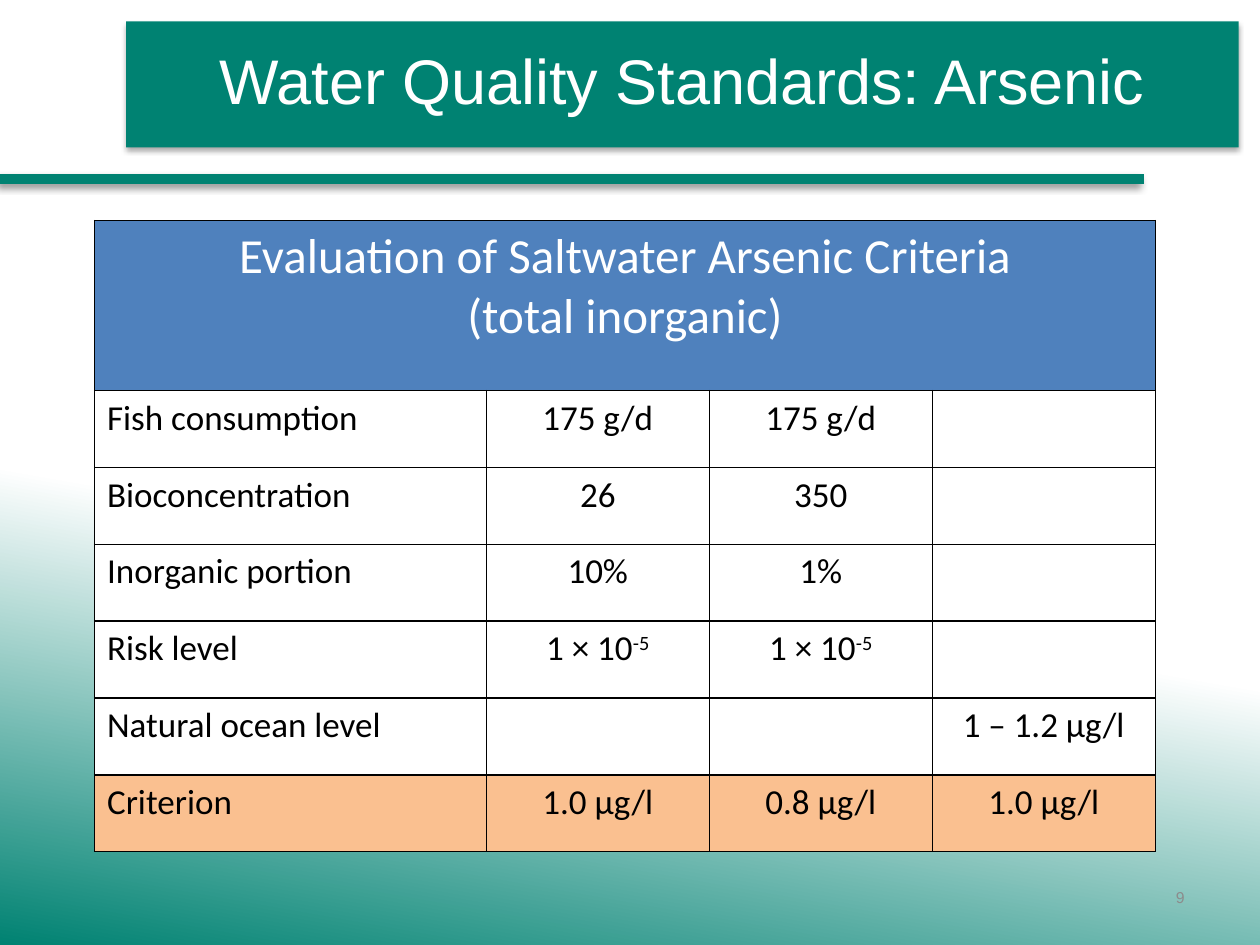
from lxml.etree import SubElement
from pptx import Presentation
from pptx.dml.color import RGBColor
from pptx.enum.shapes import MSO_CONNECTOR
from pptx.enum.text import MSO_ANCHOR, MSO_AUTO_SIZE, PP_ALIGN
from pptx.oxml.ns import qn
from pptx.util import Inches, Pt

COLORS = {
    "teal": "008272",
    "white": "FFFFFF",
    "black": "000000",
    "header": "4F81BD",
    "criterion": "FAC090",
    "page": "8C8C8C",
}
RGB = {name: RGBColor.from_string(value) for name, value in COLORS.items()}


def add_run(paragraph, text, font_name, size, color):
    run = paragraph.add_run()
    run.text = text
    run.font.name = font_name
    run.font.size = Pt(size)
    run.font.color.rgb = RGB[color]
    return run


def add_shadow(shape, opacity, blur, distance, angle):
    """Give the shape a black outer shadow; blur and distance are in points."""
    shape.shadow.inherit = False
    effects = shape._element.spPr.find(qn("a:effectLst"))
    outer = SubElement(effects, qn("a:outerShdw"), blurRad=str(Pt(blur)),
                       dist=str(Pt(distance)), dir=str(angle * 60000),
                       algn="ctr", rotWithShape="0")
    black = SubElement(outer, qn("a:srgbClr"), val=COLORS["black"])
    SubElement(black, qn("a:alpha"), val=str(opacity * 1000))


prs = Presentation()
prs.slide_width, prs.slide_height = Inches(10), Inches(7.5)
slide = prs.slides.add_slide(prs.slide_layouts[5])

# Background
backdrop = slide.background.fill
backdrop.gradient()
backdrop.gradient_angle = 260
for stop, position, color in zip(backdrop.gradient_stops, (0.59, 1), ("white", "teal")):
    stop.position = position
    stop.color.rgb = RGB[color]

# Title band and rule
title = slide.shapes.title
title.left, title.top = Inches(1), Inches(0.17)
title.width, title.height = Inches(8.83), Inches(1)
title.fill.solid()
title.fill.fore_color.rgb = RGB["teal"]
add_shadow(title, 35, 3.1, 1.8, 90)
heading = title.text_frame
heading.auto_size = MSO_AUTO_SIZE.NONE
heading.word_wrap = True
heading.vertical_anchor = MSO_ANCHOR.MIDDLE
heading.margin_left = heading.margin_right = Inches(0.21)
heading.margin_top = heading.margin_bottom = Inches(0.21)
heading.paragraphs[0].alignment = PP_ALIGN.CENTER
heading.paragraphs[0].line_spacing = 0.9
add_run(heading.paragraphs[0], "Water Quality Standards: Arsenic", "Arial", 36, "white")

rule = slide.shapes.add_connector(MSO_CONNECTOR.STRAIGHT, Inches(0), Inches(1.42),
                                  Inches(9.08), Inches(1.42))
rule.line.color.rgb = RGB["teal"]
rule.line.width = Pt(6)
SubElement(rule._element.spPr, qn("a:effectLst"))
rule_effects = rule._element.spPr.find(qn("a:effectLst"))
rule_shadow = SubElement(rule_effects, qn("a:outerShdw"), blurRad=str(Pt(4)),
                         dist=str(Pt(3)), dir=str(135 * 60000), rotWithShape="0")
SubElement(SubElement(rule_shadow, qn("a:srgbClr"), val=COLORS["black"]),
           qn("a:alpha"), val="40000")

# Criteria table: each cell is a list of paragraphs, "^" starts a superscript
rows = [
    ["Evaluation of Saltwater Arsenic Criteria\n(total inorganic)", "", "", ""],
    ["Fish consumption", "175 g/d", "175 g/d", ""],
    ["Bioconcentration", "26", "350", ""],
    ["Inorganic portion", "10%", "1%", ""],
    ["Risk level", "1 × 10^-5", "1 × 10^-5", ""],
    ["Natural ocean level", "", "", "1 – 1.2 µg/l"],
    ["Criterion", "1.0 µg/l", "0.8 µg/l", "1.0 µg/l"],
]
criteria = slide.shapes.add_table(len(rows), 4, Inches(0.75), Inches(1.75),
                                  Inches(8.42), Inches(5)).table
for c, column in enumerate(criteria.columns):
    column.width = Inches(1.77 if c else 3.11)
for r, row in enumerate(criteria.rows):
    row.height = Inches(0.61 if r else 1.35)
criteria.cell(0, 0).merge(criteria.cell(0, 3))

row_fills = ["header"] + ["white"] * 5 + ["criterion"]
for r, (values, row_fill) in enumerate(zip(rows, row_fills)):
    size, color = (20, "black") if r else (28, "white")
    for c, value in enumerate(values):
        cell = criteria.cell(r, c)
        cell_props = cell._tc.get_or_add_tcPr()
        for side in ("a:lnL", "a:lnR", "a:lnT", "a:lnB"):
            border = SubElement(cell_props, qn(side), w=str(Pt(1)))
            border_fill = SubElement(border, qn("a:solidFill"))
            SubElement(border_fill, qn("a:srgbClr"), val=COLORS["black"])
        cell.fill.solid()
        cell.fill.fore_color.rgb = RGB[row_fill]
        if not value:
            continue
        for i, line in enumerate(value.split("\n")):
            frame = cell.text_frame
            paragraph = frame.add_paragraph() if i else frame.paragraphs[0]
            paragraph.alignment = PP_ALIGN.LEFT if r and not c else PP_ALIGN.CENTER
            base, _, exponent = line.partition("^")
            add_run(paragraph, base, "Calibri", size, color)
            if exponent:
                raised = add_run(paragraph, exponent, "Calibri", size, color)
                raised._r.get_or_add_rPr().set("baseline", "30000")

# Page number
page = slide.shapes.add_textbox(Inches(7.17), Inches(6.92), Inches(2.33), Inches(0.4))
page.text_frame.word_wrap = True
page.text_frame.vertical_anchor = MSO_ANCHOR.MIDDLE
page.text_frame.paragraphs[0].alignment = PP_ALIGN.RIGHT
add_run(page.text_frame.paragraphs[0], "9", "Arial", 9, "page")

prs.save("out.pptx")
